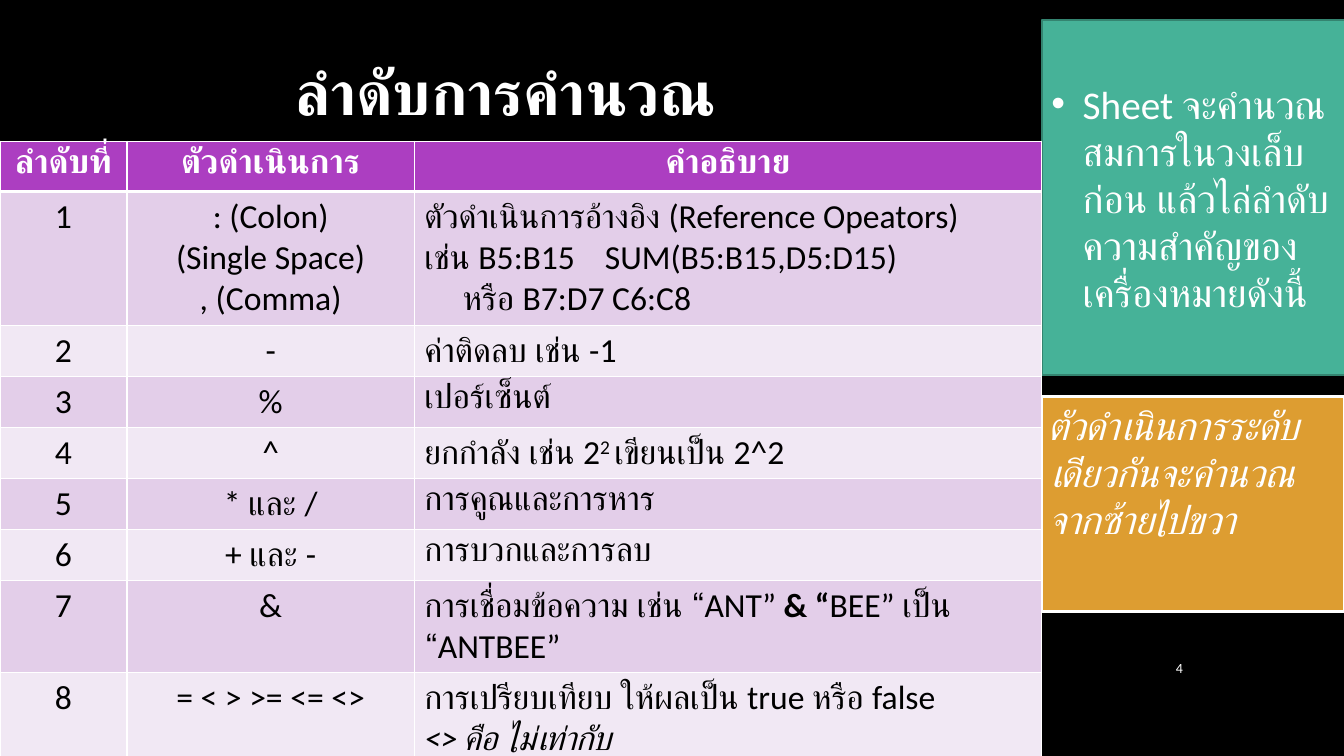
from dataclasses import dataclass

from lxml import etree
from pptx import Presentation
from pptx import util as u
from pptx.dml.color import RGBColor
from pptx.enum import lang, shapes, text
from pptx.oxml.ns import qn

WIDTH, HEIGHT = u.Inches(13.33), u.Inches(7.5)
FONT = "Calibri"
WHITE, BLACK = "FFFFFF", "000000"
HEADER, BANDS = "AC3EC1", ("E3CEE9", "F1E8F4")
LEFT, CENTER, RIGHT = text.PP_ALIGN.LEFT, text.PP_ALIGN.CENTER, text.PP_ALIGN.RIGHT
TOP, MIDDLE = text.MSO_ANCHOR.TOP, text.MSO_ANCHOR.MIDDLE
SIDE_LEFT, SIDE_WIDTH = 77.5, 22.57
TABLE_TOP = 18.67
COLUMNS = (9.45, 21.38, 46.67)
ROWS = (5.73, 17.73, *(6.75,) * 5, 12.17, 12.17)


@dataclass(frozen=True)
class Span:
    words: str
    bold: bool = False
    italic: bool = False
    raised: bool = False


@dataclass(frozen=True)
class Line:
    spans: tuple[Span, ...]
    indent: float = 0
    tab: float = 0
    bullet: bool = False
    after: float = 0


@dataclass(frozen=True)
class Panel:
    left: float
    top: float
    width: float
    height: float
    lines: tuple[Line, ...]
    size: float
    anchor: text.MSO_ANCHOR = MIDDLE
    align: text.PP_ALIGN = LEFT
    fill: str = ""
    edge: str = ""
    edge_width: float = 0


@dataclass(frozen=True)
class Precedence:
    operators: tuple[str, ...]
    meaning: tuple[Line, ...]


def line(words: str, bold: bool = False, italic: bool = False, **layout) -> Line:
    return Line((Span(words, bold, italic),), **layout)


PANELS = (
    Panel(21.23, 2.67, 73.14, 18.67, (line("ลำดับการคำนวณ", bold=True),), 44),
    Panel(SIDE_LEFT, 2.67, SIDE_WIDTH, 46.93,
          (line("Sheet จะคำนวณสมการในวงเล็บก่อน แล้วไล่ลำดับความสำคัญของเครื่องหมายดังนี้",
                indent=0.31, bullet=True, after=10),),
          28, fill="46B298", edge="348470", edge_width=1.5),
    Panel(84.25, 85.6, 4.5, 5.47, (line("4"),), 10, align=RIGHT),
    Panel(SIDE_LEFT, 52.4, SIDE_WIDTH, 28.53,
          (line("ตัวดำเนินการระดับเดียวกันจะคำนวณจากซ้ายไปขวา", italic=True),),
          28, anchor=TOP, fill="DD9D31", edge=WHITE, edge_width=2),
)
HEADINGS = ("ลำดับที่", "ตัวดำเนินการ", "คำอธิบาย")
PRECEDENCES = (
    Precedence((": (Colon)", "(Single Space)", ", (Comma)"),
               (line("ตัวดำเนินการอ้างอิง (Reference Opeators)"),
                line("เช่น B5:B15\tSUM(B5:B15,D5:D15)", tab=1.79),
                line("หรือ B7:D7 C6:C8", indent=0.38))),
    Precedence(("-",), (line("ค่าติดลบ เช่น -1"),)),
    Precedence(("%",), (line("เปอร์เซ็นต์"),)),
    Precedence(("^",), (Line((Span("ยกกำลัง เช่น 2"), Span("2 ", raised=True),
                              Span("เขียนเป็น 2^2"))),)),
    Precedence(("* และ /",), (line("การคูณและการหาร"),)),
    Precedence(("+ และ -",), (line("การบวกและการลบ"),)),
    Precedence(("&",), (Line((Span("การเชื่อมข้อความ เช่น “ANT” "), Span("& “", bold=True),
                              Span("BEE” เป็น “ANTBEE”"))),)),
    Precedence(("= < > >= <= <>",),
               (line("การเปรียบเทียบ ให้ผลเป็น true หรือ false"),
                line("<> คือ ไม่เท่ากับ", italic=True))),
)


def across(share: float) -> int:
    return round(WIDTH * share / 100)


def down(share: float) -> int:
    return round(HEIGHT * share / 100)


def colour(value: str) -> RGBColor:
    return RGBColor.from_string(value)


def paint(target, value: str) -> None:
    target.fill.solid()
    target.fill.fore_color.rgb = colour(value)


def write(frame, lines: tuple[Line, ...], size: float, ink: str, align: text.PP_ALIGN) -> None:
    for index, item in enumerate(lines):
        para = frame.paragraphs[0] if index == 0 else frame.add_paragraph()
        para.alignment = align
        para.space_after = u.Pt(item.after)
        properties = para._p.get_or_add_pPr()
        if item.indent:
            properties.set("marL", str(u.Inches(item.indent)))
        if item.bullet:
            properties.set("indent", str(-u.Inches(item.indent)))
            etree.SubElement(properties, qn("a:buFont"), typeface="Arial")
            etree.SubElement(properties, qn("a:buChar"), char="•")
        if item.tab:
            stops = etree.SubElement(properties, qn("a:tabLst"))
            etree.SubElement(stops, qn("a:tab"), pos=str(u.Inches(item.tab)), algn="l")
        for part in item.spans:
            span = para.add_run()
            span.text = part.words
            span.font.name, span.font.size = FONT, u.Pt(size)
            span.font.bold, span.font.italic = part.bold, part.italic
            span.font.color.rgb = colour(ink)
            span.font.language_id = lang.MSO_LANGUAGE_ID.THAI
            if part.raised:
                span.font._element.set("baseline", "30000")


def add_panel(page, panel: Panel) -> None:
    place = (across(panel.left), down(panel.top), across(panel.width), down(panel.height))
    if panel.fill:
        box = page.shapes.add_shape(shapes.MSO_SHAPE.RECTANGLE, *place)
        box.shadow.inherit = False
        paint(box, panel.fill)
        box.line.color.rgb = colour(panel.edge)
        box.line.width = u.Pt(panel.edge_width)
    else:
        box = page.shapes.add_textbox(*place)
    box.text_frame.word_wrap = True
    box.text_frame.vertical_anchor = panel.anchor
    write(box.text_frame, panel.lines, panel.size, WHITE, panel.align)


def add_border(cell, side: str, width: float) -> None:
    border = etree.SubElement(cell._tc.get_or_add_tcPr(), qn(f"a:{side}"), w=str(u.Pt(width)))
    solid = etree.SubElement(border, qn("a:solidFill"))
    etree.SubElement(solid, qn("a:srgbClr"), val=WHITE)


def fill_cell(cell, lines: tuple[Line, ...], heading: bool, fill: str, align: text.PP_ALIGN,
              top_width: float) -> None:
    for side, width in (("lnL", 1), ("lnR", 1), ("lnT", top_width), ("lnB", 3 if heading else 1)):
        add_border(cell, side, width)
    paint(cell, fill)
    write(cell.text_frame, lines, 24, WHITE if heading else BLACK, align)


def add_precedence_table(page) -> None:
    table = page.shapes.add_table(len(ROWS), len(COLUMNS), 0, down(TABLE_TOP),
                                  across(sum(COLUMNS)), down(sum(ROWS))).table
    for column, share in zip(table.columns, COLUMNS):
        column.width = across(share)
    for row, share in zip(table.rows, ROWS):
        row.height = down(share)
    for column, heading in enumerate(HEADINGS):
        fill_cell(table.cell(0, column), (line(heading, bold=True),), True, HEADER, CENTER, 1)
    for rank, item in enumerate(PRECEDENCES, 1):
        contents = ((line(str(rank)),), tuple(map(line, item.operators)), item.meaning)
        for column, lines in enumerate(contents):
            fill_cell(table.cell(rank, column), lines, False, BANDS[(rank - 1) % 2],
                      LEFT if column == 2 else CENTER, 3 if rank == 1 else 1)


def main() -> None:
    deck = Presentation()
    deck.slide_width, deck.slide_height = WIDTH, HEIGHT
    page = deck.slides.add_slide(deck.slide_layouts[6])
    paint(page.background, BLACK)
    for panel in PANELS:
        add_panel(page, panel)
    add_precedence_table(page)
    deck.save("out.pptx")


if __name__ == "__main__":
    main()
